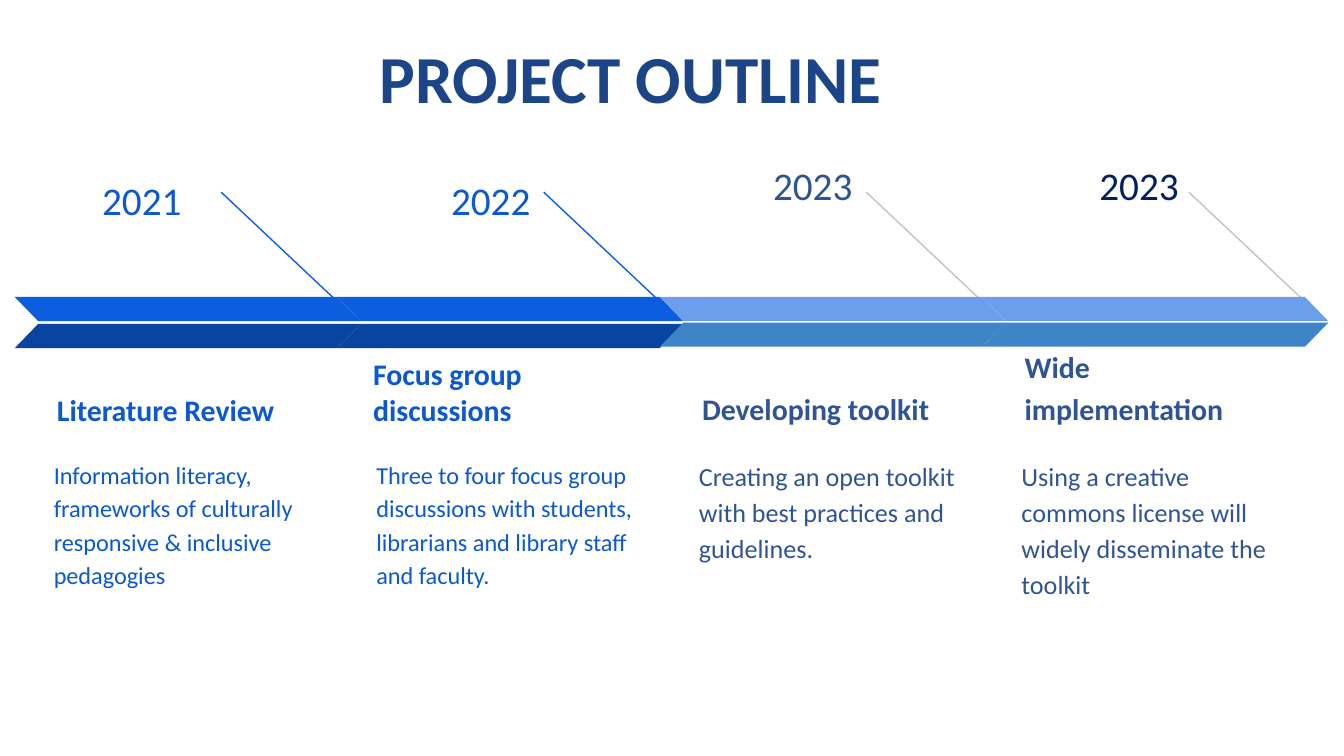
from dataclasses import dataclass

import pptx
import pptx.dml.color
import pptx.enum.shapes
import pptx.enum.text
import pptx.oxml
import pptx.util

Align = pptx.enum.text.PP_ALIGN
Anchor = pptx.enum.text.MSO_ANCHOR
Shape = pptx.enum.shapes.MSO_SHAPE


@dataclass(frozen=True)
class Theme:
    font: str = "Calibri"
    title: str = "1C4587"
    bright: str = "0C58D3"
    muted: str = "2F5496"
    navy: str = "002060"
    blue_top: str = "0D5DDF"
    blue_base: str = "0944A1"
    pale_top: str = "6D9EEB"
    pale_base: str = "3D85C6"
    grey: str = "C2C2C2"
    title_size: int = 36
    year_size: int = 21
    heading_size: int = 16
    body_small: int = 13
    body_large: int = 14


@dataclass(frozen=True)
class Box:
    x: float
    y: float
    w: float
    h: float


@dataclass(frozen=True)
class Style:
    size: int
    color: str
    bold: bool = False
    align: Align = Align.LEFT
    anchor: Anchor = Anchor.TOP
    spacing: float = 1.15
    after: int = 0


@dataclass(frozen=True)
class Look:
    text: str
    top: str
    base: str
    line: str
    body_size: int
    base_y: float


@dataclass(frozen=True)
class Stage:
    year: str
    year_box: Box
    year_style: Style
    heading: str
    heading_box: Box
    heading_spacing: float
    body: str
    body_w: float
    look: Look


T = Theme()
WIDTH = 10
HEIGHT = WIDTH * 9 / 16
LEFT, COL, ROW = 0.11, 2.4, 0.1
BAND_H, SKEW = 1.8, 0.97
BAND_W = 1 + BAND_H * ROW * SKEW / COL

BLUE = Look(T.bright, T.blue_top, T.blue_base, T.blue_top, T.body_small, 24.1)
PALE = Look(T.muted, T.pale_top, T.pale_base, T.grey, T.body_large, 24)

STAGES = [
    Stage("2021", Box(0.23, 11.6, 0.42, 4.8), Style(T.year_size, T.bright, after=16),
          "Literature Review", Box(0.09, 27.1, 0.88, 5.7), 1.15,
          "Information literacy, frameworks of culturally responsive & inclusive pedagogies",
          0.88, BLUE),
    Stage("2022", Box(0.25, 11.6, 0.39, 4.9),
          Style(T.year_size, T.bright, align=Align.RIGHT, after=16),
          "Focus group discussions", Box(0.07, 27.1, 0.99, 5.7), 1,
          "Three to four focus group discussions with students, librarians and library staff "
          "and faculty.", 0.9, BLUE),
    Stage("2023", Box(0.31, 11, 0.4, 4.3), Style(T.year_size, T.muted, spacing=1, after=16),
          "Developing toolkit", Box(0.09, 27, 0.88, 5.7), 1.15,
          "Creating an open toolkit with best practices and guidelines.", 0.9, PALE),
    Stage("2023", Box(0.28, 11, 0.37, 4.3),
          Style(T.year_size, T.navy, align=Align.RIGHT, spacing=1, after=16),
          "Wide implementation", Box(0.09, 27, 0.88, 5.7), 1.15,
          "Using a creative commons license will widely disseminate the toolkit", 0.9, PALE),
]


def rgb(color: str) -> pptx.dml.color.RGBColor:
    return pptx.dml.color.RGBColor.from_string(color)


def col_x(col: float) -> int:
    return pptx.util.Inches(LEFT + col * COL)


def row_y(row: float) -> int:
    return pptx.util.Inches(row * ROW)


def place(col: int, box: Box) -> tuple[int, int, int, int]:
    return col_x(col + box.x), row_y(box.y), pptx.util.Inches(box.w * COL), row_y(box.h)


def write(sp, text: str, style: Style, inset_x: float = 0.1, inset_y: float = 0.1) -> None:
    tf = sp.text_frame
    tf.word_wrap = True
    tf.auto_size = pptx.enum.text.MSO_AUTO_SIZE.NONE
    tf.vertical_anchor = style.anchor
    tf.margin_left = tf.margin_right = pptx.util.Inches(inset_x)
    tf.margin_top = tf.margin_bottom = pptx.util.Inches(inset_y)
    p = tf.paragraphs[0]
    p.text = text
    p.alignment = style.align
    p.line_spacing = style.spacing
    p.space_before = pptx.util.Pt(0)
    p.space_after = pptx.util.Pt(style.after)
    p.font.name = T.font
    p.font.size = pptx.util.Pt(style.size)
    p.font.bold = style.bold
    p.font.color.rgb = rgb(style.color)


def add_text(s, col: int, box: Box, text: str, style: Style) -> None:
    write(s.shapes.add_textbox(*place(col, box)), text, style)


def add_band(s, col: int, y: float, color: str, flip: bool) -> None:
    sp = s.shapes.add_shape(Shape.PARALLELOGRAM, *place(col, Box(0, y, BAND_W, BAND_H)))
    sp.adjustments[0] = SKEW
    sp.shadow.inherit = False
    sp.fill.solid()
    sp.fill.fore_color.rgb = rgb(color)
    sp.line.fill.background()
    if flip:
        sp._element.spPr.xfrm.set("flipH", "1")


def add_leader(s, col: int, color: str) -> None:
    line = s.shapes.add_connector(pptx.enum.shapes.MSO_CONNECTOR.STRAIGHT,
                                  col_x(col + 0.64), row_y(14.3),
                                  col_x(col + 1.06), row_y(23.8))
    line.line.color.rgb = rgb(color)
    line.line.width = pptx.util.Pt(0.75)
    effects = pptx.oxml.parse_xml(
        '<a:effectLst xmlns:a="http://schemas.openxmlformats.org/drawingml/2006/main"/>')
    line._element.spPr.append(effects)


def add_stage(s, col: int, stage: Stage) -> None:
    look = stage.look
    add_text(s, col, stage.year_box, stage.year, stage.year_style)
    add_text(s, col, stage.heading_box, stage.heading,
             Style(T.heading_size, look.text, bold=True, anchor=Anchor.BOTTOM,
                   spacing=stage.heading_spacing))
    add_text(s, col, Box(0.08, 32.9, stage.body_w, 9.4), stage.body,
             Style(look.body_size, look.text, after=16))
    add_leader(s, col, look.line)
    add_band(s, col, 22.1, look.top, flip=True)
    add_band(s, col, look.base_y, look.base, flip=False)


def main() -> None:
    prs = pptx.Presentation()
    prs.slide_width = pptx.util.Inches(WIDTH)
    prs.slide_height = pptx.util.Inches(HEIGHT)
    s = prs.slides.add_slide(prs.slide_layouts[5])
    title = s.shapes.title
    title.left, title.top = pptx.util.Inches(1.71), pptx.util.Inches(0.23)
    title.width, title.height = pptx.util.Inches(5.97), pptx.util.Inches(0.68)
    write(title, "PROJECT OUTLINE",
          Style(T.title_size, T.title, bold=True, align=Align.CENTER, spacing=1), 0.07, 0.04)
    for col, stage in enumerate(STAGES):
        add_stage(s, col, stage)
    prs.save("out.pptx")


if __name__ == "__main__":
    main()
